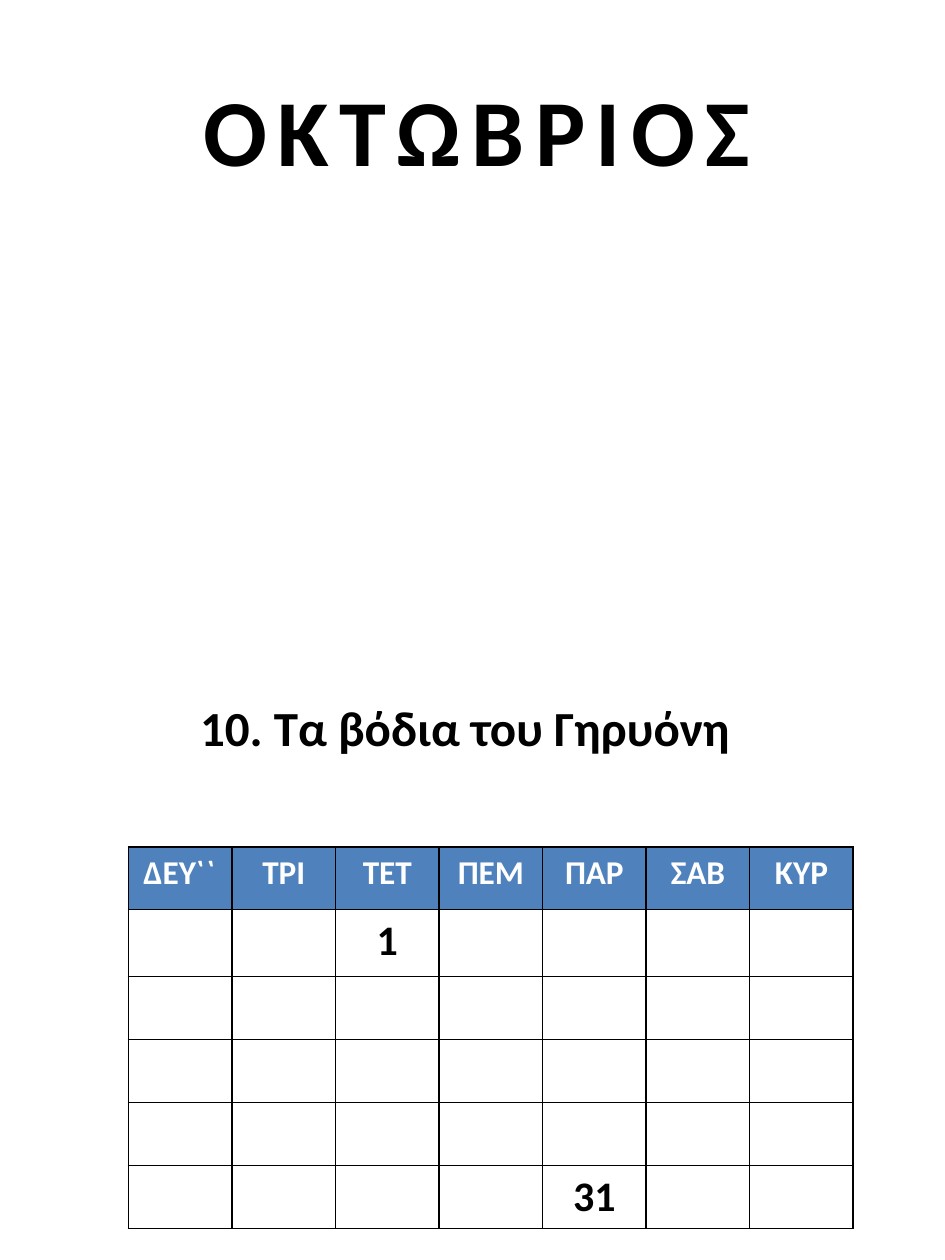
import pptx
import pptx.util
import pptx.dml.color
import pptx.enum.text
import pptx.oxml
import pptx.oxml.ns
from dataclasses import dataclass

Cm, Pt = pptx.util.Cm, pptx.util.Pt
RGB = pptx.dml.color.RGBColor.from_string
ns = pptx.oxml.ns

# Content
MONTH = "ΟΚΤΩΒΡΙΟΣ"
LABOUR = "10. Τα βόδια του Γηρυόνη"
DAYS = ["ΔΕΥ``", "ΤΡΙ", "ΤΕΤ", "ΠΕΜ", "ΠΑΡ", "ΣΑΒ", "ΚΥΡ"]
DATES = {(1, 2): "1", (5, 4): "31"}  # (row, column)
WEEKS = 5


@dataclass
class Theme:
    font: str = "Calibri"
    ink: str = "000000"
    paper: str = "FFFFFF"
    head: str = "4F81BD"
    title: int = 54
    sub: int = 28
    day: int = 19
    date: int = 24


look = Theme()

# Places: left, top, width, height in cm
TITLE = (1.52, 1.3, 16.2, 2.57)
SUB = (2.72, 13.94, 13.3, 1.45)
GRID = (2.59, 17.07, 14.61, 7.67)
ROWS = [1.26, 1.35] + [1.27] * (WEEKS - 1)


def write(frame, text, size, color):
    """Put one bold centred run in a text frame."""
    para = frame.paragraphs[0]
    para.alignment = pptx.enum.text.PP_ALIGN.CENTER
    run = para.add_run()
    run.text = text
    font = run.font
    font.name, font.size, font.bold = look.font, Pt(size), True
    font.color.rgb = RGB(color)
    return run


def border(cell):
    """Draw a 1 pt line on all four sides."""
    props = cell._tc.get_or_add_tcPr()
    for i, side in enumerate(("lnL", "lnR", "lnT", "lnB")):
        line = pptx.oxml.parse_xml(
            f'<a:{side} {ns.nsdecls("a")} w="{Pt(1)}"><a:solidFill>'
            f'<a:srgbClr val="{look.ink}"/></a:solidFill></a:{side}>')
        props.insert(i, line)


# Slide
deck = pptx.Presentation()
deck.slide_width, deck.slide_height = Cm(19.05), Cm(25.4)
slide = deck.slides.add_slide(deck.slide_layouts[5])

# Month title
title = slide.shapes.title
title.left, title.top, title.width, title.height = map(Cm, TITLE)
run = write(title.text_frame, MONTH, look.title, look.ink)
run._r.get_or_add_rPr().set("spc", "600")

# Labour of the month
box = slide.shapes.add_textbox(*map(Cm, SUB))
box.text_frame.word_wrap = True
write(box.text_frame, LABOUR, look.sub, look.ink)

# Calendar
grid = slide.shapes.add_table(len(ROWS), len(DAYS), *map(Cm, GRID)).table
for col in grid.columns:
    col.width = Cm(GRID[2] / len(DAYS))
for r, high in enumerate(ROWS):
    grid.rows[r].height = Cm(high)
    for c, day in enumerate(DAYS):
        cell = grid.cell(r, c)
        cell.fill.solid()
        cell.fill.fore_color.rgb = RGB(look.paper if r else look.head)
        border(cell)
        if r == 0:
            write(cell.text_frame, day, look.day, look.paper)
        elif (r, c) in DATES:
            write(cell.text_frame, DATES[r, c], look.date, look.ink)

deck.save("out.pptx")
